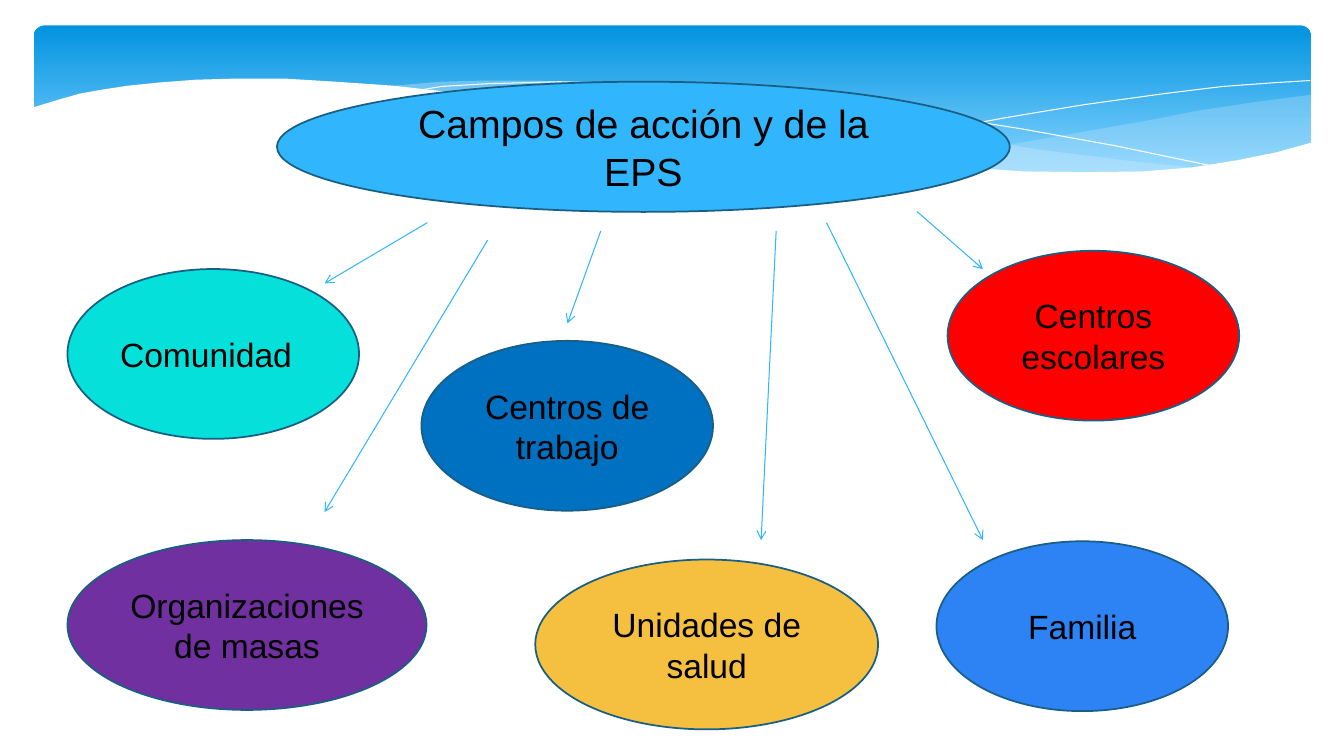
from dataclasses import dataclass
from typing import Any, Optional

from lxml import etree
from pptx import Presentation
from pptx import util as u
from pptx.dml.color import RGBColor
from pptx.enum import shapes, text
from pptx.oxml import ns

BLACK = RGBColor(0x00, 0x00, 0x00)
WHITE = RGBColor(0xFF, 0xFF, 0xFF)
BANNER_TOP = RGBColor(0x02, 0x93, 0xE0)
BANNER_BOTTOM = RGBColor(0x83, 0xD3, 0xFE)
PALE_BLUE = RGBColor(0xC6, 0xE7, 0xFC)
SKY = RGBColor(0x31, 0xB6, 0xFD)
OUTLINE = RGBColor(0x19, 0x5F, 0x84)
RED = RGBColor(0xFF, 0x00, 0x00)
TURQUOISE = RGBColor(0x05, 0xE0, 0xDB)
PURPLE = RGBColor(0x70, 0x30, 0xA0)
DEEP_BLUE = RGBColor(0x00, 0x70, 0xC0)
BRIGHT_BLUE = RGBColor(0x2D, 0x83, 0xF4)
AMBER = RGBColor(0xF5, 0xC0, 0x40)

CENTER = text.PP_ALIGN.CENTER
FONT_FORMAT = {"name": "Arial", "bold": False}
FRAME_FORMAT = {"word_wrap": True, "vertical_anchor": text.MSO_ANCHOR.MIDDLE}


@dataclass(frozen=True)
class Wave:
    """A banner outline, in hundredths of a centimetre; without a fill it is an open white line."""
    points: list[tuple[int, int]]
    fill: Optional[RGBColor] = None
    opacity: int = 100


@dataclass(frozen=True)
class Bubble:
    """A labelled ellipse, in centimetres."""
    label: str
    left: float
    top: float
    fill: RGBColor
    width: float = 7.35
    height: float = 4.28
    size: int = 24
    alignment: text.PP_ALIGN = CENTER


@dataclass(frozen=True)
class Arrow:
    start: tuple[float, float]
    end: tuple[float, float]


WAVES = [
    Wave([(3302, 239), (3165, 257), (3018, 279), (2913, 300), (2725, 333), (2553, 363),
          (2390, 386), (2240, 406), (2388, 419), (2522, 429), (2682, 437), (2827, 437),
          (2954, 429), (3066, 414), (3167, 396), (3305, 361), (3305, 239)], PALE_BLUE, 29),
    Wave([(3023, 424), (2835, 404), (2626, 378), (2390, 340), (2131, 295), (1976, 269),
          (1831, 246), (1656, 226), (1496, 211), (1351, 203), (1224, 203), (1110, 206),
          (970, 218), (1158, 239), (1369, 269), (1521, 295), (1793, 343), (2037, 381),
          (2253, 409), (2446, 427), (2616, 437), (2769, 439), (2903, 434)], PALE_BLUE, 40),
    Wave([(1046, 229), (1113, 218), (1229, 211), (1410, 206), (1588, 211), (1803, 224),
          (2060, 249), (2355, 290), (2576, 325), (2814, 368), (3073, 422)]),
    Wave([(2078, 384), (2210, 358), (2355, 330), (2532, 297), (2731, 264), (2934, 236),
          (3081, 218), (3218, 208), (3302, 203)]),
    Wave([(3310, 358), (3216, 384), (3117, 404), (3005, 422), (2880, 432), (2738, 434),
          (2578, 432), (2398, 419), (2192, 396), (1961, 366), (1704, 325), (1514, 290),
          (1323, 259), (1151, 234), (991, 216), (846, 206), (716, 198), (597, 198),
          (493, 201), (401, 208), (323, 216), (257, 226), (201, 236), (155, 249),
          (122, 259), (79, 272), (79, 569), (3310, 569)], WHITE),
]

BUBBLES = [
    Bubble("Campos de acción y de la EPS", 6.98, 2.06, SKY, width=18.47, height=3.28, size=28),
    Bubble("Centros escolares", 23.88, 6.32, RED),
    Bubble("Comunidad", 1.7, 6.78, TURQUOISE, alignment=text.PP_ALIGN.JUSTIFY),
    Bubble("Organizaciones de masas", 1.7, 13.61, PURPLE, width=9.05),
    Bubble("Centros de trabajo", 10.62, 8.59, DEEP_BLUE),
    Bubble("Familia", 23.6, 13.64, BRIGHT_BLUE),
    Bubble("Unidades de salud", 13.49, 14.1, AMBER, width=8.64),
]

ARROWS = [
    Arrow((10.77, 5.61), (8.18, 7.14)),
    Arrow((15.14, 5.82), (14.3, 8.15)),
    Arrow((23.11, 5.33), (24.77, 6.78)),
    Arrow((20.83, 5.61), (24.77, 13.61)),
    Arrow((12.29, 6.05), (8.18, 12.9)),
    Arrow((19.56, 5.82), (19.18, 13.61)),
]


def apply_format(target: Any, values: dict[str, Any]) -> None:
    for name, value in values.items():
        setattr(target, name, value)


def set_line(line: Any, color: RGBColor, width: float) -> None:
    line.color.rgb = color
    line.width = u.Pt(width)


def add_banner(slide: Any) -> None:
    banner = slide.shapes.add_shape(
        shapes.MSO_SHAPE.ROUNDED_RECTANGLE, u.Cm(0.85), u.Cm(0.64), u.Cm(32.2), u.Cm(4.02))
    banner.adjustments[0] = 0.07
    banner.shadow.inherit = False
    banner.line.fill.background()
    banner.fill.gradient()
    banner.fill.gradient_angle = 270
    stops = zip(banner.fill.gradient_stops, (BANNER_TOP, BANNER_BOTTOM), (0, 0.9))
    for stop, color, position in stops:
        stop.color.rgb = color
        stop.position = position


def add_wave(slide: Any, wave: Wave) -> None:
    builder = slide.shapes.build_freeform(*wave.points[0], scale=u.Cm(0.01))
    builder.add_line_segments(wave.points[1:], close=wave.fill is not None)
    shape = builder.convert_to_shape()
    shape.shadow.inherit = False
    if wave.fill is None:
        shape.fill.background()
        set_line(shape.line, WHITE, 0)
        return
    shape.line.fill.background()
    shape.fill.solid()
    shape.fill.fore_color.rgb = wave.fill
    if wave.opacity < 100:
        color = shape._element.spPr.find(ns.qn("a:solidFill")).find(ns.qn("a:srgbClr"))
        etree.SubElement(color, ns.qn("a:alpha"), val=str(wave.opacity * 1000))


def add_bubble(slide: Any, bubble: Bubble) -> None:
    box = (bubble.left, bubble.top, bubble.width, bubble.height)
    shape = slide.shapes.add_shape(shapes.MSO_SHAPE.OVAL, *map(u.Cm, box))
    shape.shadow.inherit = False
    shape.fill.solid()
    shape.fill.fore_color.rgb = bubble.fill
    set_line(shape.line, OUTLINE, 1.25)
    apply_format(shape.text_frame, FRAME_FORMAT)
    paragraph = shape.text_frame.paragraphs[0]
    paragraph.alignment = bubble.alignment
    run = paragraph.add_run()
    run.text = bubble.label
    apply_format(run.font, FONT_FORMAT | {"size": u.Pt(bubble.size)})
    run.font.color.rgb = BLACK


def add_arrow(slide: Any, arrow: Arrow) -> None:
    connector = slide.shapes.add_connector(
        shapes.MSO_CONNECTOR.STRAIGHT, *map(u.Cm, arrow.start + arrow.end))
    set_line(connector.line, SKY, 0.75)
    properties = connector._element.spPr
    etree.SubElement(properties.find(ns.qn("a:ln")), ns.qn("a:tailEnd"), type="arrow")
    etree.SubElement(properties, ns.qn("a:effectLst"))


def main() -> None:
    presentation = Presentation()
    apply_format(presentation, {"slide_width": u.Cm(33.87), "slide_height": u.Cm(19.05)})
    slide = presentation.slides.add_slide(presentation.slide_layouts[6])
    add_banner(slide)
    for wave in WAVES:
        add_wave(slide, wave)
    for bubble in BUBBLES:
        add_bubble(slide, bubble)
    for arrow in ARROWS:
        add_arrow(slide, arrow)
    presentation.save("out.pptx")


if __name__ == "__main__":
    main()
